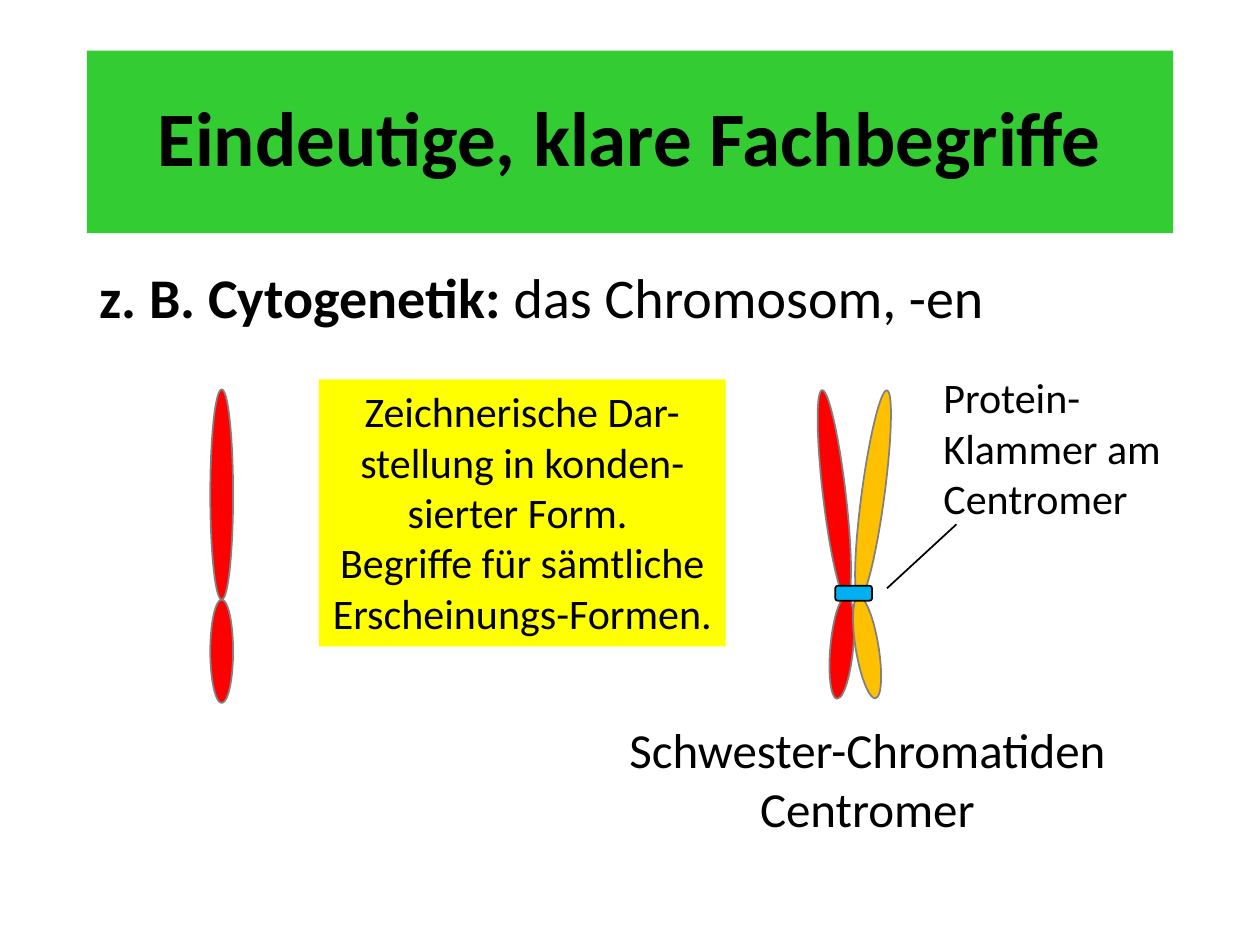
from dataclasses import dataclass

from lxml.etree import SubElement
from pptx import Presentation
from pptx.dml.color import RGBColor
from pptx.enum.shapes import MSO_CONNECTOR, MSO_SHAPE
from pptx.enum.text import MSO_ANCHOR, PP_ALIGN
from pptx.oxml.ns import qn
from pptx.util import Cm, Pt


@dataclass(frozen=True)
class Theme:
    font: str = "Calibri"
    text: str = "000000"
    title_fill: str = "33CC33"
    note_fill: str = "FFFF00"
    red: str = "FF0000"
    orange: str = "FFC000"
    clamp: str = "00B0F0"
    outline: str = "808080"
    title_size: int = 44
    lead_size: int = 32
    caption_size: int = 28
    note_size: int = 24
    line_width: int = 1


class SlideBuilder:
    def __init__(self, slide, theme):
        self.s = slide
        self.theme = theme

    def text(self, box, paragraphs, size, fill=None, align=PP_ALIGN.LEFT,
             anchor=MSO_ANCHOR.TOP, bold=None, spacing=None):
        sp = self.s.shapes.add_textbox(*map(Cm, box))
        if fill:
            sp.fill.solid()
            sp.fill.fore_color.rgb = RGBColor.from_string(fill)
        tf = sp.text_frame
        tf.word_wrap = True
        tf.vertical_anchor = anchor
        for i, runs in enumerate(paragraphs):
            p = tf.paragraphs[0] if i == 0 else tf.add_paragraph()
            p.alignment = align
            p.line_spacing = spacing
            p.font.name = self.theme.font
            p.font.size = Pt(size)
            p.font.bold = bold
            p.font.color.rgb = RGBColor.from_string(self.theme.text)
            for content, run_bold in runs:
                r = p.add_run()
                r.text = content
                r.font.bold = run_bold

    def shape(self, kind, box, fill, line, rotation=0):
        sp = self.s.shapes.add_shape(kind, *map(Cm, box))
        sp.shadow.inherit = False
        sp.rotation = rotation
        sp.fill.solid()
        sp.fill.fore_color.rgb = RGBColor.from_string(fill)
        sp.line.color.rgb = RGBColor.from_string(line)
        sp.line.width = Pt(self.theme.line_width)

    def arm(self, left, top, height, fill, rotation=0):
        self.shape(MSO_SHAPE.OVAL, (left, top, 0.46, height), fill,
                   self.theme.outline, rotation)

    def line(self, start, end):
        c = self.s.shapes.add_connector(
            MSO_CONNECTOR.STRAIGHT, *map(Cm, start + end))
        c.line.color.rgb = RGBColor.from_string(self.theme.text)
        c.line.width = Pt(self.theme.line_width)
        SubElement(c._element.spPr, qn("a:effectLst"))


def main():
    prs = Presentation()
    prs.slide_width, prs.slide_height = Cm(25.4), Cm(19.05)
    theme = Theme()
    b = SlideBuilder(prs.slides.add_slide(prs.slide_layouts[6]), theme)

    b.text((1.75, 1.02, 21.9, 3.68),
           [[("Eindeutige, klare Fachbegriffe", None)]],
           theme.title_size, theme.title_fill, PP_ALIGN.CENTER,
           MSO_ANCHOR.MIDDLE, bold=True, spacing=0.9)
    b.text((1.75, 5.16, 21.9, 3),
           [[("z. B. Cytogenetik: ", True), ("das Chromosom, -en", False)]],
           theme.lead_size)

    long_arm, short_arm = 4.24, 2.08
    arm_top = 7.85
    b.arm(4.24, arm_top, long_arm, theme.red)
    b.arm(4.24, arm_top + long_arm, short_arm, theme.red)
    chromatids = [
        (theme.red, 16.59, 353.3, 16.74, 5.3),
        (theme.orange, 17.37, 7.6, 17.25, 350.6),
    ]
    for fill, long_left, long_turn, short_left, short_turn in chromatids:
        b.arm(long_left, arm_top, long_arm, fill, long_turn)
        b.arm(short_left, 12.01, short_arm, fill, short_turn)
    b.shape(MSO_SHAPE.ROUNDED_RECTANGLE, (16.84, 11.81, 0.74, 0.3),
            theme.clamp, theme.text)

    b.text((11.48, 14.38, 12.01, 2.64),
           [[("Schwester-Chromatiden", None)], [("Centromer", None)]],
           theme.caption_size, align=PP_ALIGN.CENTER)
    b.text((6.43, 7.65, 8.2, 5.38),
           [[("Zeichnerische Dar-stellung in konden-sierter Form. ", None)],
            [("Begriffe für sämtliche Erscheinungs-Formen.", None)]],
           theme.note_size, theme.note_fill, PP_ALIGN.CENTER)
    b.text((18.77, 7.37, 5.13, 3.33),
           [[("Protein-Klammer am Centromer", None)]], theme.note_size)
    b.line((17.88, 11.86), (19.28, 10.57))

    prs.save("out.pptx")


if __name__ == "__main__":
    main()
